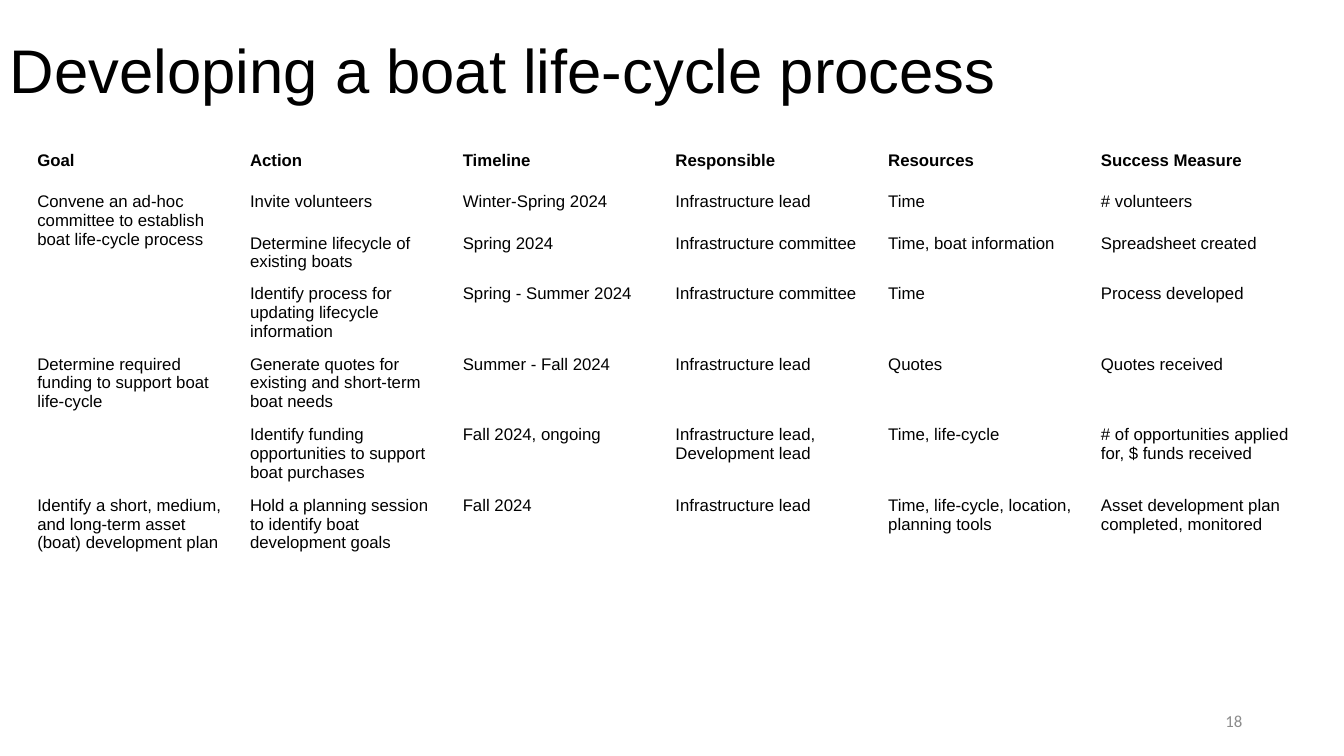
"""Build the boat life-cycle process slide with its action plan table."""
from pptx import Presentation
from pptx.dml.color import RGBColor
from pptx.enum.text import MSO_ANCHOR, PP_ALIGN
from pptx.util import Inches, Pt

WIDTH, HEIGHT = 13.33, 7.5
COLUMN_WIDTH, ROW_HEIGHT = 2.11, 0.41
TABLE_LEFT, TABLE_TOP = 0.27, 1.45

HEADINGS = ["Goal", "Action", "Timeline", "Responsible", "Resources", "Success Measure"]
GOALS = [
    ("Convene an ad-hoc committee to establish boat life-cycle process", [
        ["Invite volunteers", "Winter-Spring 2024", "Infrastructure lead", "Time", "# volunteers"],
        ["Determine lifecycle of existing boats", "Spring 2024", "Infrastructure committee",
         "Time, boat information", "Spreadsheet created"],
        ["Identify process for updating lifecycle information", "Spring - Summer 2024",
         "Infrastructure committee", "Time", "Process developed"],
    ]),
    ("Determine required funding to support boat life-cycle", [
        ["Generate quotes for existing and short-term boat needs", "Summer - Fall 2024",
         "Infrastructure lead", "Quotes", "Quotes received"],
        ["Identify funding opportunities to support boat purchases", "Fall 2024, ongoing",
         "Infrastructure lead, Development lead", "Time, life-cycle",
         "# of opportunities applied for, $ funds received"],
    ]),
    ("Identify a short, medium, and long-term asset (boat) development plan", [
        ["Hold a planning session to identify boat development goals", "Fall 2024",
         "Infrastructure lead", "Time, life-cycle, location, planning tools",
         "Asset development plan completed, monitored"],
    ]),
]


def write(frame, text, size=12, font="Arial", color="000000", bold=False,
          align=PP_ALIGN.LEFT, spacing=1.0):
    frame.word_wrap = True
    paragraph = frame.paragraphs[0]
    paragraph.alignment = align
    paragraph.line_spacing = spacing
    run = paragraph.add_run()
    run.text = text
    run.font.size = Pt(size)
    run.font.name = font
    run.font.bold = bold
    run.font.color.rgb = RGBColor.from_string(color)


def add_text(slide, left, top, width, height, text, **style):
    shape = slide.shapes.add_textbox(Inches(left), Inches(top), Inches(width), Inches(height))
    shape.text_frame.vertical_anchor = MSO_ANCHOR.MIDDLE
    write(shape.text_frame, text, **style)


presentation = Presentation()
presentation.slide_width = Inches(WIDTH)
presentation.slide_height = Inches(HEIGHT)
slide = presentation.slides.add_slide(presentation.slide_layouts[6])

add_text(slide, 0, 0, WIDTH, 1.45, "Developing a boat life-cycle process", size=44, spacing=0.9)

row_count = 1 + sum(len(actions) for goal, actions in GOALS)
table = slide.shapes.add_table(
    row_count, len(HEADINGS), Inches(TABLE_LEFT), Inches(TABLE_TOP),
    Inches(COLUMN_WIDTH * len(HEADINGS)), Inches(ROW_HEIGHT * row_count)).table
table.first_row = False
table.horz_banding = False
for column in table.columns:
    column.width = Inches(COLUMN_WIDTH)
for row in table.rows:
    row.height = Inches(ROW_HEIGHT)
for cell in table.iter_cells():
    cell.fill.background()

for column_index, heading in enumerate(HEADINGS):
    write(table.cell(0, column_index).text_frame, heading, bold=True)

row_index = 1
for goal, actions in GOALS:
    goal_cell = table.cell(row_index, 0)
    if len(actions) > 1:
        goal_cell.merge(table.cell(row_index + len(actions) - 1, 0))
    write(goal_cell.text_frame, goal)
    for action in actions:
        for column_index, text in enumerate(action, start=1):
            write(table.cell(row_index, column_index).text_frame, text)
        row_index += 1

tag = table._tbl.tblPr.find("{http://schemas.openxmlformats.org/drawingml/2006/main}tableStyleId")
tag.text = "{2D5ABB26-0587-4C30-8999-92F81FD0307C}"

add_text(slide, 9.42, 6.95, 3, 0.4, "18", font="Calibri", color="8C8C8C", align=PP_ALIGN.RIGHT)

presentation.save("out.pptx")
